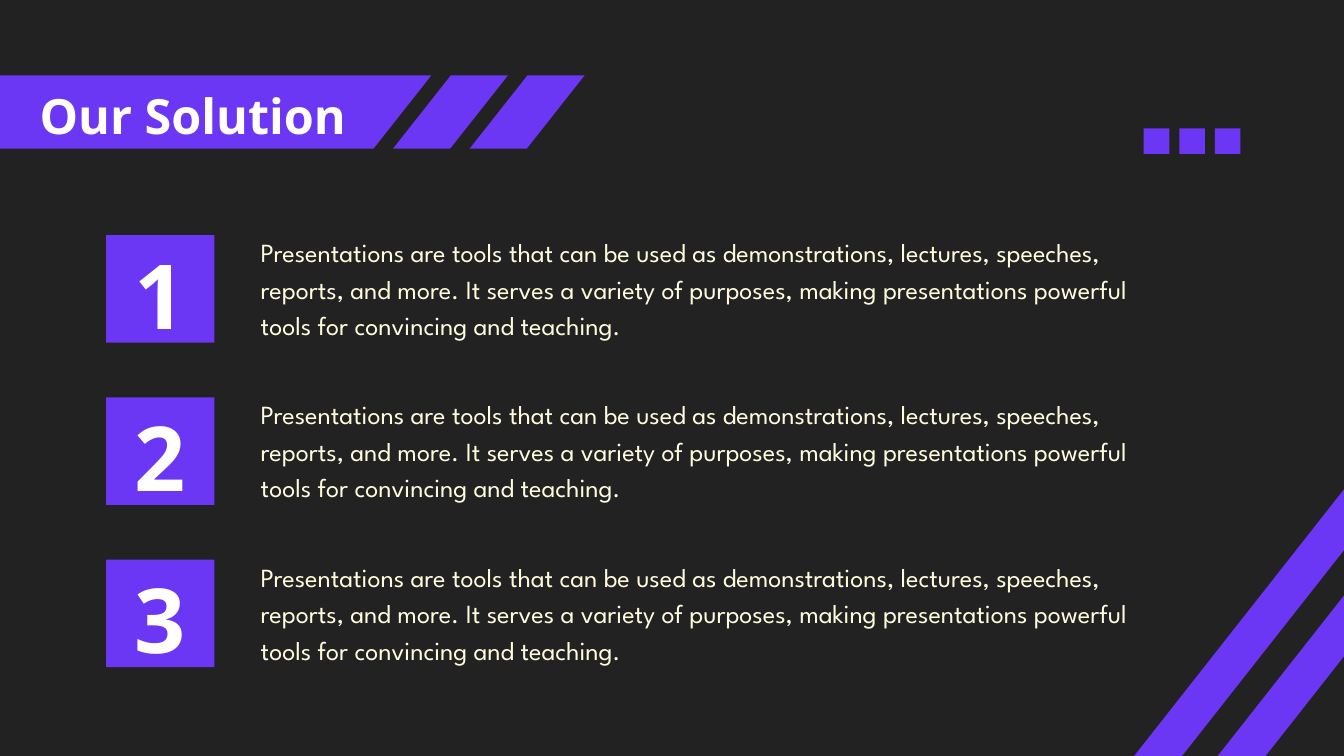
from pptx import Presentation
from pptx.dml.color import RGBColor
from pptx.enum.shapes import MSO_SHAPE as SHAPE
from pptx.enum.text import MSO_ANCHOR, MSO_AUTO_SIZE, PP_ALIGN as ALIGN
from pptx.util import Inches, Pt

PURPLE = RGBColor(0x6B, 0x37, 0xF4)
DARK = RGBColor(0x22, 0x22, 0x22)
WHITE = RGBColor(0xFF, 0xFF, 0xFF)
CREAM = RGBColor(0xFF, 0xFC, 0xDD)

TITLE = "Our Solution"
POINT = ("Presentations are tools that can be used as demonstrations, lectures, "
         "speeches, reports, and more. It serves a variety of purposes, making "
         "presentations powerful tools for convincing and teaching.")
POINTS = [POINT] * 3

HEADING = dict(name="Open Sans", size=Pt(52), bold=True)
NUMBER = dict(name="Open Sans", size=Pt(96), bold=True)
BODY = dict(name="League Spartan", size=Pt(28), bold=False)
LEADING = 1.4  # line pitch as a multiple of the font size

# Inches
WIDTH, HEIGHT = 20, 11.25
BANNER_TOP, BANNER_H, SLANT = 1.12, 1.09, 0.86
BANNER_PARTS = [(6.99, 1.71), (5.85, 1.71), (-4.65, 11.07)]  # left, width
ROW_TOP, ROW_PITCH = 3.5, 2.415
SQUARE_LEFT, SQUARE_W, SQUARE_H = 1.58, 1.61, 1.6
STRIPES = [(19.02, 6.62), (18.17, 6.12)]  # left, top
STRIPE_W, STRIPE_H, STRIPE_ANGLE = 0.56, 7.17, 38.2
DOT_LEFT, DOT_TOP, DOT_SIZE, DOT_PITCH = 17.02, 1.91, 0.38, 0.53


def block(slide, kind, *box):
    sp = slide.shapes.add_shape(kind, *map(Inches, box))
    sp.shadow.inherit = False
    sp.fill.solid()
    sp.fill.fore_color.rgb = PURPLE
    sp.line.fill.background()
    return sp


def write(sp, text, style, color, align=ALIGN.LEFT):
    tf = sp.text_frame
    frame = dict(word_wrap=True, auto_size=MSO_AUTO_SIZE.NONE,
                 vertical_anchor=MSO_ANCHOR.TOP, margin_left=0,
                 margin_top=0, margin_right=0, margin_bottom=0)
    for key, value in frame.items():
        setattr(tf, key, value)
    p = tf.paragraphs[0]
    p.alignment = align
    p.line_spacing = Pt(style["size"].pt * LEADING)
    r = p.add_run()
    r.text = text
    for key, value in style.items():
        setattr(r.font, key, value)
    r.font.color.rgb = color


def text_box(slide, box, *content):
    write(slide.shapes.add_textbox(*map(Inches, box)), *content)


def add_banner(slide):
    for left, width in BANNER_PARTS:
        sp = block(slide, SHAPE.PARALLELOGRAM, left, BANNER_TOP, width, BANNER_H)
        sp.adjustments[0] = SLANT / BANNER_H
    title = slide.shapes.title
    title.left, title.top, title.width, title.height = map(
        Inches, (0.59, 1.13, 5.22, 0.97))
    write(title, TITLE, HEADING, WHITE)
    slide.shapes._spTree.append(title._element)  # bring in front of the banner


def add_points(slide):
    for i, point in enumerate(POINTS):
        top = ROW_TOP + i * ROW_PITCH
        block(slide, SHAPE.RECTANGLE, SQUARE_LEFT, top, SQUARE_W, SQUARE_H)
        text_box(slide, (SQUARE_LEFT, top - 0.2, SQUARE_W, 1.8),
                 str(i + 1), NUMBER, WHITE, ALIGN.CENTER)
        text_box(slide, (3.88, top - 0.06, 12.98, 1.61), point, BODY, CREAM)


def add_decoration(slide):
    for left, top in STRIPES:
        sp = block(slide, SHAPE.RECTANGLE, left, top, STRIPE_W, STRIPE_H)
        sp.rotation = STRIPE_ANGLE
    for i in range(3):
        block(slide, SHAPE.RECTANGLE, DOT_LEFT + i * DOT_PITCH, DOT_TOP,
              DOT_SIZE, DOT_SIZE)


def main():
    prs = Presentation()
    prs.slide_width, prs.slide_height = Inches(WIDTH), Inches(HEIGHT)
    slide = prs.slides.add_slide(prs.slide_layouts[5])  # Title Only
    slide.background.fill.solid()
    slide.background.fill.fore_color.rgb = DARK
    add_banner(slide)
    add_points(slide)
    add_decoration(slide)
    prs.save("out.pptx")


if __name__ == "__main__":
    main()
